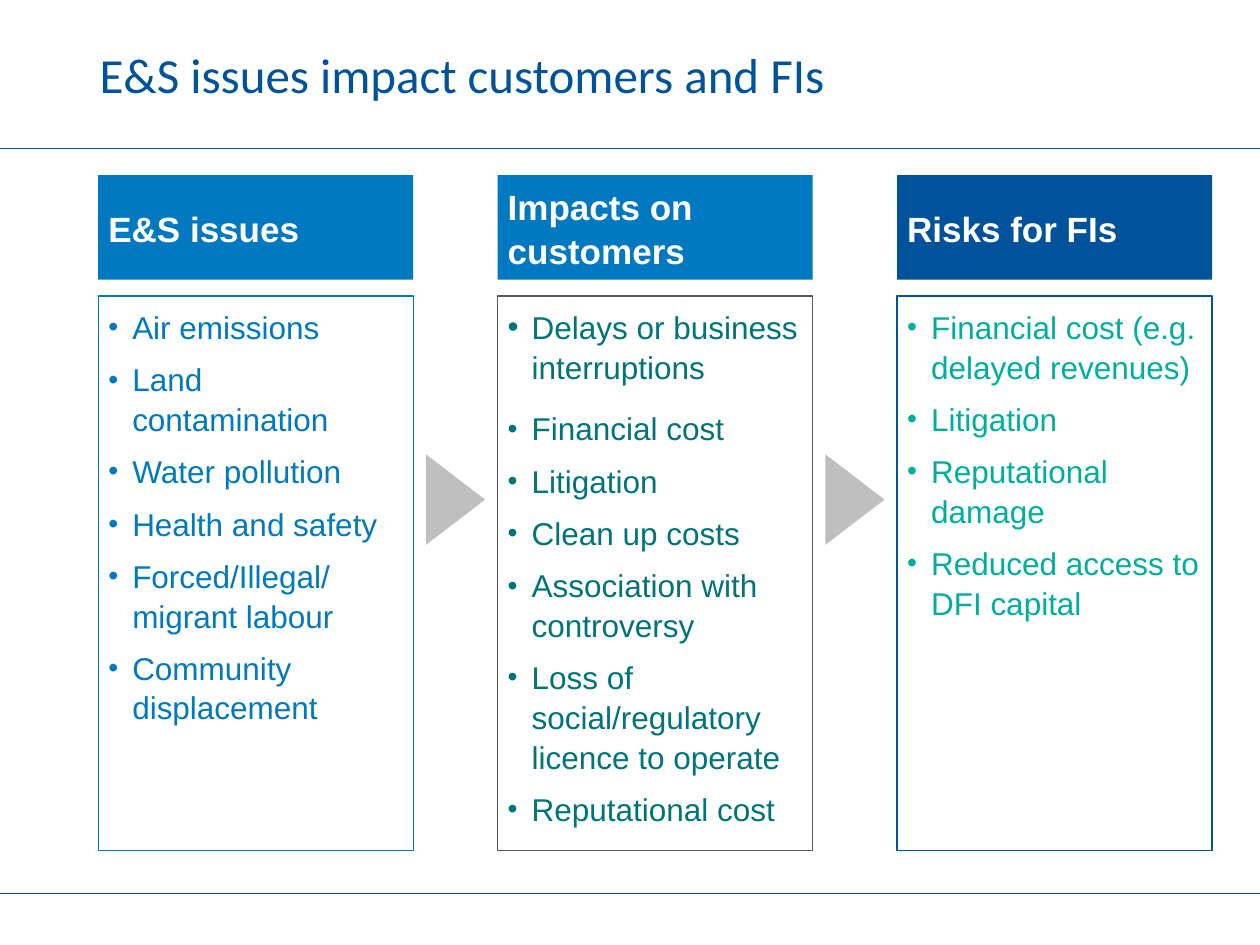
from lxml import etree
from pptx import Presentation
from pptx.dml.color import RGBColor
from pptx.enum.shapes import MSO_CONNECTOR, MSO_SHAPE
from pptx.enum.text import MSO_ANCHOR, PP_ALIGN
from pptx.oxml.ns import qn
from pptx.util import Inches, Pt

STRAIGHT = MSO_CONNECTOR.STRAIGHT
RECTANGLE = MSO_SHAPE.RECTANGLE
TRIANGLE = MSO_SHAPE.ISOSCELES_TRIANGLE
TOP, MIDDLE = MSO_ANCHOR.TOP, MSO_ANCHOR.MIDDLE
LEFT = PP_ALIGN.LEFT

WIDTH, HEIGHT = 10, 7.5
MARGIN, COLUMN_WIDTH, COLUMN_STEP = 0.78, 2.5, 3.17
HEADER_ROW = (1.39, 0.83)
LIST_ROW = (2.35, 4.4)
INSET, INDENT = 0.08, 0.19

COLUMNS = [
    ("E&S issues", "0079C1", "0079C1", "0079C1",
     ["Air emissions", "Land contamination", "Water pollution", "Health and safety",
      "Forced/Illegal/migrant labour", "Community displacement"]),
    ("Impacts on customers", "0079C1", "58595B", "00747A",
     ["Delays or business interruptions", "Financial cost", "Litigation", "Clean up costs",
      "Association with controversy", "Loss of social/regulatory licence to operate",
      "Reputational cost"]),
    ("Risks for FIs", "00539B", "00539B", "00AE9E",
     ["Financial cost (e.g. delayed revenues)", "Litigation", "Reputational damage",
      "Reduced access to DFI capital"]),
]


def color(value):
    """Turn a hex string into a colour."""
    return RGBColor.from_string(value)


def set_values(target, values):
    """Set each attribute named in a dict."""
    for name, value in values.items():
        setattr(target, name, value)


class SlideBuilder:
    """Hold the slide and draw each kind of element in its style."""

    def __init__(self, slide):
        """Keep the current slide and the shared text formats."""
        self.slide = slide
        self.header_font = {"name": "Arial", "size": Pt(20), "bold": True}
        self.list_font = {"name": "Arial", "size": Pt(18)}
        self.title_font = {"name": "Calibri", "size": Pt(28)}
        self.spacing = {"line_spacing": 1.05, "space_before": Pt(3.6), "space_after": Pt(3.6)}

    def rule(self, share):
        """Draw a full-width line at a share of the slide height."""
        top = Inches(HEIGHT * share)
        line = self.slide.shapes.add_connector(STRAIGHT, 0, top, Inches(WIDTH), top)
        line.line.color.rgb = color("005198")
        line.line.width = Pt(0.25)
        etree.SubElement(line._element.spPr, qn("a:effectLst"))

    def shape(self, kind, left, top, width, height, fill=None, outline=None):
        """Add a flat shape with an optional fill and outline."""
        shape = self.slide.shapes.add_shape(
            kind, Inches(left), Inches(top), Inches(width), Inches(height))
        shape.shadow.inherit = False
        if fill:
            shape.fill.solid()
            shape.fill.fore_color.rgb = color(fill)
        else:
            shape.fill.background()
        if outline:
            shape.line.color.rgb = color(outline)
            shape.line.width = Pt(0.75)
        else:
            shape.line.fill.background()
        return shape

    def frame(self, box, anchor, inset):
        """Set wrapping, anchor and insets of a box."""
        sides = ("margin_left", "margin_top", "margin_right", "margin_bottom")
        set_values(box.text_frame, {"word_wrap": True, "vertical_anchor": anchor,
                                    **dict.fromkeys(sides, Inches(inset))})
        return box.text_frame

    def add_span(self, para, text, font, text_color):
        """Put one formatted span in a left-aligned paragraph."""
        para.alignment = LEFT
        span = para.add_run()
        span.text = text
        set_values(span.font, font)
        span.font.color.rgb = color(text_color)

    def bullet(self, para, percent):
        """Give a paragraph a hanging round bullet."""
        properties = para._p.get_or_add_pPr()
        properties.set("marL", str(Inches(INDENT)))
        properties.set("indent", str(-Inches(INDENT)))
        for tag, name, value in (("a:buSzPct", "val", str(percent * 1000)),
                                 ("a:buFont", "typeface", "Arial"),
                                 ("a:buChar", "char", "•")):
            etree.SubElement(properties, qn(tag)).set(name, value)

    def title(self, text):
        """Add the slide title."""
        box = self.slide.shapes.add_textbox(
            Inches(MARGIN + 0.01), 0, Inches(6.46), Inches(1.18))
        frame = self.frame(box, MIDDLE, 0)
        self.add_span(frame.paragraphs[0], text, self.title_font, "00539B")

    def header(self, column, text, fill):
        """Draw the filled heading of a column."""
        top, height = HEADER_ROW
        box = self.shape(RECTANGLE, MARGIN + column * COLUMN_STEP, top,
                         COLUMN_WIDTH, height, fill=fill)
        para = self.frame(box, MIDDLE, INSET).paragraphs[0]
        para.line_spacing = self.spacing["line_spacing"]
        self.add_span(para, text, self.header_font, "FFFFFF")

    def bullet_list(self, column, items, outline, text_color, wide_first):
        """Draw the outlined list of a column."""
        top, height = LIST_ROW
        box = self.shape(RECTANGLE, MARGIN + column * COLUMN_STEP, top,
                         COLUMN_WIDTH, height, outline=outline)
        frame = self.frame(box, TOP, INSET)
        for index, item in enumerate(items):
            para = frame.add_paragraph() if index else frame.paragraphs[0]
            wide = wide_first and index == 0
            self.bullet(para, 100 if wide else 90)
            set_values(para, self.spacing)
            if index == 0:
                para.space_before = Pt(0)
            if wide:
                para.space_after = Pt(9)
            self.add_span(para, item, self.list_font, text_color)

    def arrow(self, column):
        """Draw a triangle in the gap after a column."""
        width, height = 0.72, 0.47
        center = MARGIN + column * COLUMN_STEP + (COLUMN_WIDTH + COLUMN_STEP) / 2
        triangle = self.shape(TRIANGLE, center - width / 2, 3.73, width, height, fill="BFBFBF")
        triangle.rotation = 90


def main():
    """Build and save the slide."""
    deck = Presentation()
    deck.slide_width, deck.slide_height = Inches(WIDTH), Inches(HEIGHT)
    page = SlideBuilder(deck.slides.add_slide(deck.slide_layouts[6]))
    for top in (1.18, 7.09):
        page.rule(top / HEIGHT)
    page.title("E&S issues impact customers and FIs")
    for column, (heading, fill, outline, text_color, items) in enumerate(COLUMNS):
        page.bullet_list(column, items, outline, text_color, wide_first=column == 1)
        page.header(column, heading, fill)
    for column in range(len(COLUMNS) - 1):
        page.arrow(column)
    deck.save("out.pptx")


if __name__ == "__main__":
    main()
